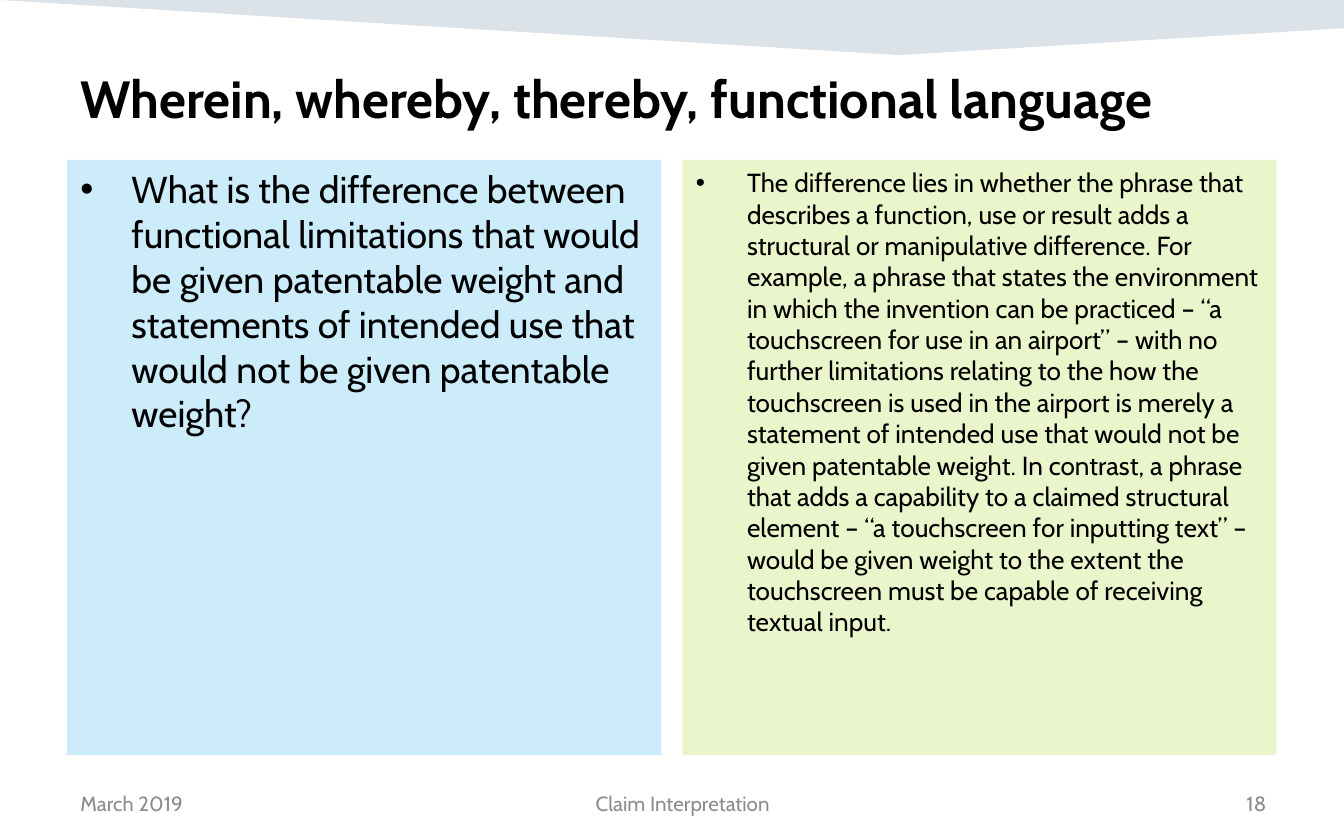
from lxml.etree import SubElement
from pptx import Presentation
from pptx.dml.color import RGBColor
from pptx.enum.shapes import MSO_SHAPE
from pptx.enum.text import MSO_ANCHOR, PP_ALIGN
from pptx.oxml.ns import qn
from pptx.util import Inches, Pt

WIDTH, HEIGHT = 10, 6.25
MARGIN = 0.5
GAP = 0.16
COLUMN = (WIDTH - 2 * MARGIN - GAP) / 2
PANEL_TOP, PANEL_HEIGHT = 1.19, 4.43
FOOTER_TOP, FOOTER_HEIGHT = 5.79, 0.33
INDENT = Inches(0.38)

FONT = "Cabin"
BLACK = RGBColor(0x00, 0x00, 0x00)
GREY = RGBColor(0x8C, 0x8C, 0x8C)
NAVY = RGBColor(0x16, 0x44, 0x69)
SKY = RGBColor(0xCC, 0xEC, 0xFA)
LIME = RGBColor(0xEB, 0xF5, 0xCB)

TITLE = "Wherein, whereby, thereby, functional language"
QUESTION = (
    "What is the difference between functional limitations that would be given "
    "patentable weight and statements of intended use that would not be given "
    "patentable weight?"
)
ANSWER = (
    "The difference lies in whether the phrase that describes a function, use or "
    "result adds a structural or manipulative difference. For example, a phrase "
    "that states the environment in which the invention can be practiced – “a "
    "touchscreen for use in an airport” – with no further limitations relating to "
    "the how the touchscreen is used in the airport is merely a statement of "
    "intended use that would not be given patentable weight. In contrast, a phrase "
    "that adds a capability to a claimed structural element – “a touchscreen for "
    "inputting text” – would be given weight to the extent the touchscreen must be "
    "capable of receiving textual input."
)
PANELS = [(QUESTION, 20, SKY), (ANSWER, 14, LIME)]
FOOTERS = [
    ("March 2019", MARGIN, 1.51, PP_ALIGN.LEFT),
    ("Claim Interpretation", 2.07, 6.02, PP_ALIGN.CENTER),
    ("18", 8.17, 1.35, PP_ALIGN.RIGHT),
]


def write(box, text, size=11, color=BLACK, bold=False, align=PP_ALIGN.LEFT,
          anchor=MSO_ANCHOR.BOTTOM, bullet=False):
    frame = box.text_frame
    frame.word_wrap = True
    frame.vertical_anchor = anchor
    para = frame.paragraphs[0]
    para.alignment = align
    if bullet:
        properties = para._p.get_or_add_pPr()
        properties.set("marL", str(INDENT))
        properties.set("indent", str(-INDENT))
        SubElement(properties, qn("a:buFont")).set("typeface", "Arial")
        SubElement(properties, qn("a:buChar")).set("char", "•")
    span = para.add_run()
    span.text = text
    span.font.name = FONT
    span.font.size = Pt(size)
    span.font.bold = bold
    span.font.color.rgb = color


def paint(shape, color, opacity=100):
    shape.shadow.inherit = False
    shape.line.fill.background()
    shape.fill.solid()
    shape.fill.fore_color.rgb = color
    if opacity < 100:
        tint = shape._element.spPr.find(qn("a:solidFill"))[0]
        SubElement(tint, qn("a:alpha")).set("val", str(opacity * 1000))


def add_banner(page):
    corners = [(WIDTH, 0), (WIDTH, 0.21), (6.69, 0.41)]
    builder = page.shapes.build_freeform(0, 0)
    builder.add_line_segments([(Inches(x), Inches(y)) for x, y in corners], close=True)
    paint(builder.convert_to_shape(), NAVY, opacity=15)


def add_text(page, text, left, top, width, height, **style):
    area = [Inches(length) for length in (left, top, width, height)]
    write(page.shapes.add_textbox(*area), text, **style)


def add_panel(page, column, text, size, color):
    left = MARGIN + column * (COLUMN + GAP)
    area = [Inches(length) for length in (left, PANEL_TOP, COLUMN, PANEL_HEIGHT)]
    panel = page.shapes.add_shape(MSO_SHAPE.RECTANGLE, *area)
    paint(panel, color)
    write(panel, text, size=size, anchor=MSO_ANCHOR.TOP, bullet=True)


def main():
    deck = Presentation()
    deck.slide_width, deck.slide_height = Inches(WIDTH), Inches(HEIGHT)
    page = deck.slides.add_slide(deck.slide_layouts[6])
    add_banner(page)
    add_text(page, TITLE, MARGIN, 0.41, WIDTH - 2 * MARGIN, 0.6, size=28, bold=True)
    for column, (text, size, color) in enumerate(PANELS):
        add_panel(page, column, text, size, color)
    for text, left, width, align in FOOTERS:
        add_text(page, text, left, FOOTER_TOP, width, FOOTER_HEIGHT,
                 color=GREY, align=align)
    deck.save("out.pptx")


if __name__ == "__main__":
    main()
